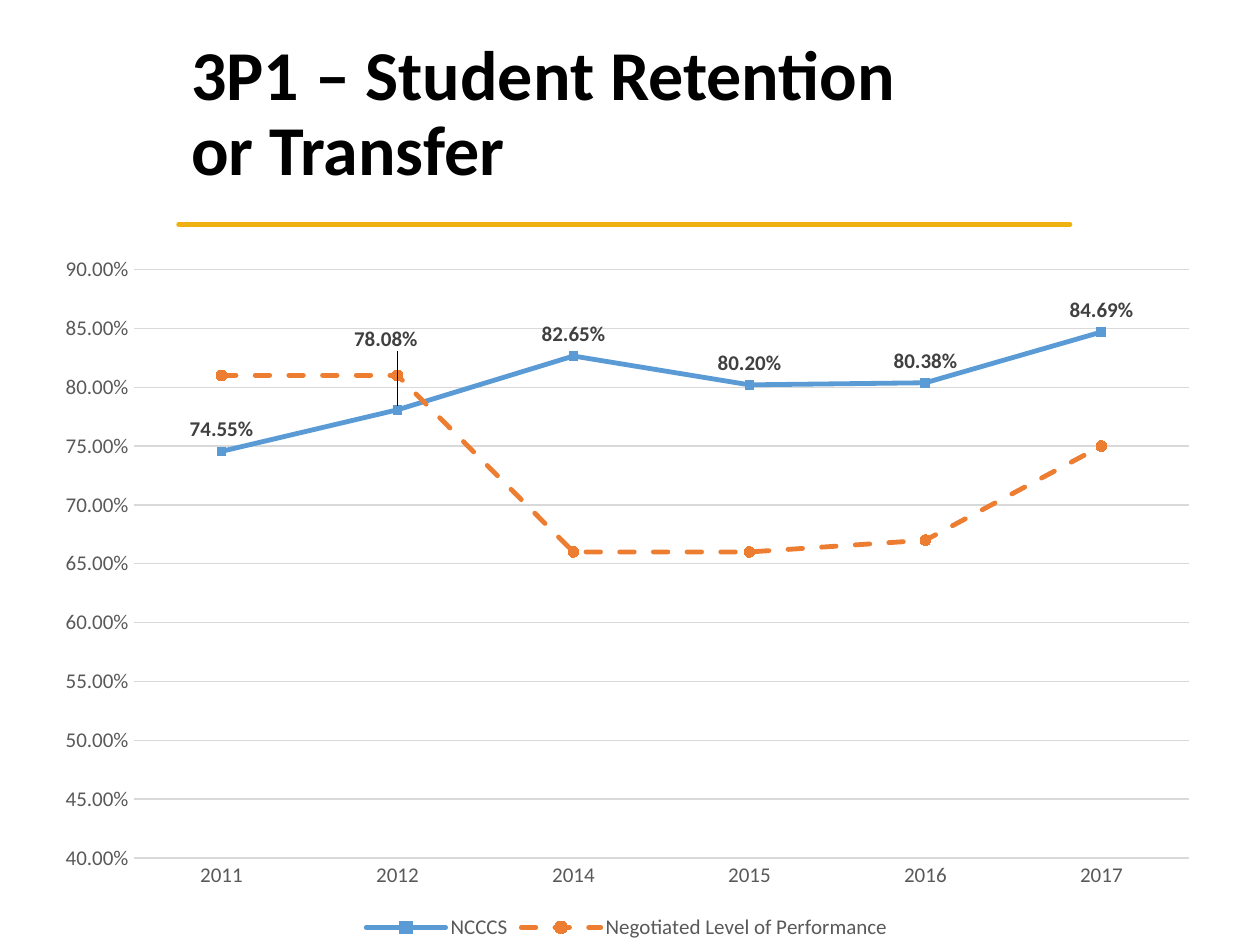
import pptx
import pptx.chart.data
import pptx.dml.color
import pptx.enum.chart
import pptx.enum.dml
import pptx.enum.shapes
import pptx.enum.text
import pptx.oxml
import pptx.oxml.ns
import pptx.util
from pptx.util import Inches

COLORS = {
    "title": "000000", "rule": "EEB111", "axis": "595959", "label": "404040",
    "grid": "D9D9D9", "actual": "5B9BD5", "actual_marker": "559BDB",
    "target": "ED7D31", "target_marker": "F67B28",
}
PERCENT = "0.00%"
XL = pptx.enum.chart
DASH = pptx.enum.dml.MSO_LINE.DASH

YEARS = ["2011", "2012", "2014", "2015", "2016", "2017"]
SERIES = [
    dict(name="NCCCS", color="actual", dash=None,
         marker=XL.XL_MARKER_STYLE.SQUARE, size=5,
         values=[0.7455, 0.7808, 0.8265, 0.802, 0.8038, 0.8469]),
    dict(name="Negotiated Level of Performance", color="target", dash=DASH,
         marker=XL.XL_MARKER_STYLE.CIRCLE, size=6,
         values=[0.81, 0.81, 0.66, 0.66, 0.67, 0.75]),
]
NO_LEADER_LINES = (
    f'<c:extLst {pptx.oxml.ns.nsdecls("c")}>'
    '<c:ext uri="{CE6537A1-D6FC-4f65-9D91-7224C49458BB}" '
    'xmlns:c15="http://schemas.microsoft.com/office/drawing/2012/chart">'
    '<c15:showLeaderLines val="0"/></c:ext></c:extLst>')


def apply(obj, values):
    for name, value in values.items():
        setattr(obj, name, value)


def set_layout(parent, index, **values):
    """Place a chart part by fractions of the chart's size."""
    for old in parent.findall(pptx.oxml.ns.qn("c:layout")):
        parent.remove(old)
    items = "".join(f'<c:{k} val="{v}"/>' for k, v in values.items())
    parent.insert(index, pptx.oxml.parse_xml(
        f'<c:layout {pptx.oxml.ns.nsdecls("c")}>'
        f"<c:manualLayout>{items}</c:manualLayout></c:layout>"))


class Deck:
    font = "Calibri"

    def __init__(self, prs):
        self.slide = prs.slides.add_slide(prs.slide_layouts[6])

    def rgb(self, key):
        return pptx.dml.color.RGBColor.from_string(COLORS[key])

    def style_font(self, font, size, color, bold=False):
        apply(font, {"name": self.font, "size": pptx.util.Pt(size), "bold": bold})
        font.color.rgb = self.rgb(color)

    def style_line(self, line, color, width):
        line.color.rgb = self.rgb(color)
        line.width = pptx.util.Pt(width)

    def title(self, lines, left, top, width, height):
        sp = self.slide.shapes.add_textbox(
            Inches(left), Inches(top), Inches(width), Inches(height))
        tf = sp.text_frame
        apply(tf, {"word_wrap": True,
                   "vertical_anchor": pptx.enum.text.MSO_ANCHOR.MIDDLE})
        p = tf.paragraphs[0]
        p.text = "\v".join(lines)
        p.line_spacing = 0.9
        for r in p.runs:
            self.style_font(r.font, 40, "title", True)

    def rule(self, x1, x2, y):
        sp = self.slide.shapes.add_connector(
            pptx.enum.shapes.MSO_CONNECTOR.STRAIGHT,
            Inches(x1), Inches(y), Inches(x2), Inches(y))
        self.style_line(sp.line, "rule", 3)
        sp.line._get_or_add_ln().set("cap", "rnd")
        sp._element.spPr.append(pptx.oxml.parse_xml(
            f'<a:effectLst {pptx.oxml.ns.nsdecls("a")}/>'))

    def line_chart(self, left, top, width, height):
        data = pptx.chart.data.CategoryChartData(number_format=PERCENT)
        data.categories = YEARS
        for item in SERIES:
            data.add_series(item["name"], item["values"])
        chart = self.slide.shapes.add_chart(
            XL.XL_CHART_TYPE.LINE_MARKERS, Inches(left), Inches(top),
            Inches(width), Inches(height), data).chart
        apply(chart, {"has_title": False, "has_legend": True})
        self.style_font(chart.font, 10, "title")
        apply(chart.legend, {"position": XL.XL_LEGEND_POSITION.BOTTOM,
                             "include_in_layout": False})
        self.style_font(chart.legend.font, 12, "axis")
        # Plot area in inches, as fractions of the chart
        set_layout(chart._chartSpace.chart.plotArea, 0, layoutTarget="inner",
                   xMode="edge", yMode="edge", x=0.73 / width, y=0.21 / height,
                   w=8.38 / width, h=4.67 / height)
        self.axes(chart)
        for series, item in zip(chart.plots[0].series, SERIES):
            self.series(series, item)
        self.labels(chart.plots[0].series[0])

    def axes(self, chart):
        for axis in (chart.category_axis, chart.value_axis):
            apply(axis, {"major_tick_mark": XL.XL_TICK_MARK.NONE,
                         "minor_tick_mark": XL.XL_TICK_MARK.NONE})
            self.style_font(axis.tick_labels.font, 12, "axis")
        self.style_line(chart.category_axis.format.line, "grid", 1)
        axis = chart.value_axis
        apply(axis, {"minimum_scale": 0.4, "maximum_scale": 0.9,
                     "major_unit": 0.05, "has_major_gridlines": True})
        apply(axis.tick_labels, {"number_format": PERCENT,
                                 "number_format_is_linked": False})
        axis.format.line.fill.background()
        self.style_line(axis.major_gridlines.format.line, "grid", 0.75)

    def series(self, series, item):
        series.smooth = False
        line = series.format.line
        self.style_line(line, item["color"], 2.75)
        line._get_or_add_ln().set("cap", "rnd")
        if item["dash"]:
            line.dash_style = item["dash"]
        marker = series.marker
        apply(marker, {"style": item["marker"], "size": item["size"]})
        marker.format.fill.solid()
        marker.format.fill.fore_color.rgb = self.rgb(item["color"] + "_marker")
        self.style_line(marker.format.line, item["color"], 0.75)

    def labels(self, series):
        above = XL.XL_LABEL_POSITION.ABOVE
        labels = series.data_labels
        apply(labels, {"show_value": True, "position": above,
                       "number_format": PERCENT, "number_format_is_linked": False})
        self.style_font(labels.font, 12, "label", True)
        # The 2012 label is lifted clear of the dashed line
        label = series.points[1].data_label
        self.style_font(label.font, 12, "label", True)
        label.position = above
        set_layout(label._get_or_add_dLbl(), 1, x=-0.01, y=-0.07)
        labels._element.append(pptx.oxml.parse_xml(NO_LEADER_LINES))


def main():
    prs = pptx.Presentation()
    apply(prs, {"slide_width": Inches(10), "slide_height": Inches(7.5)})
    deck = Deck(prs)
    # Heading and rule
    deck.rule(1.42, 8.49, 1.78)
    deck.title(["3P1 – Student Retention", "or Transfer"], 1.42, 0.19, 8.05, 1.45)
    # Retention against target
    deck.line_chart(0.33, 1.93, 9.29, 5.57)
    prs.save("out.pptx")


if __name__ == "__main__":
    main()
